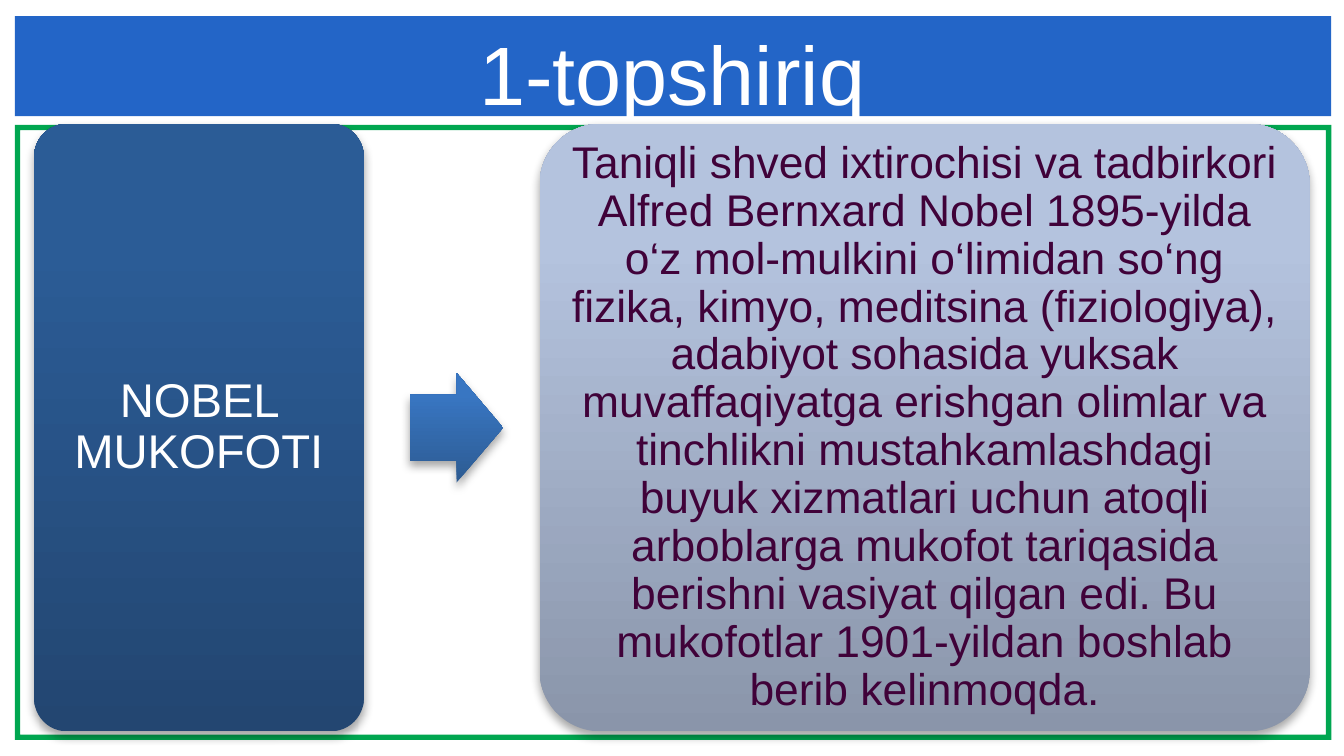
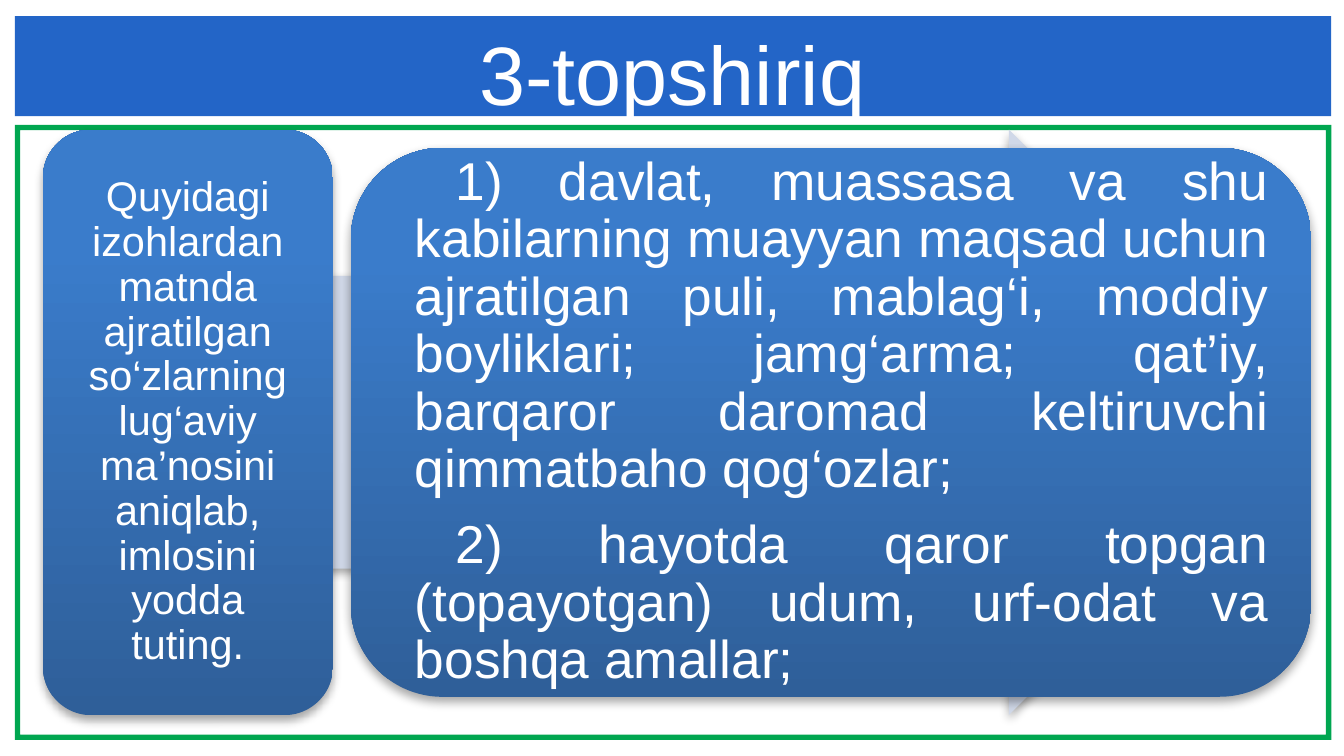
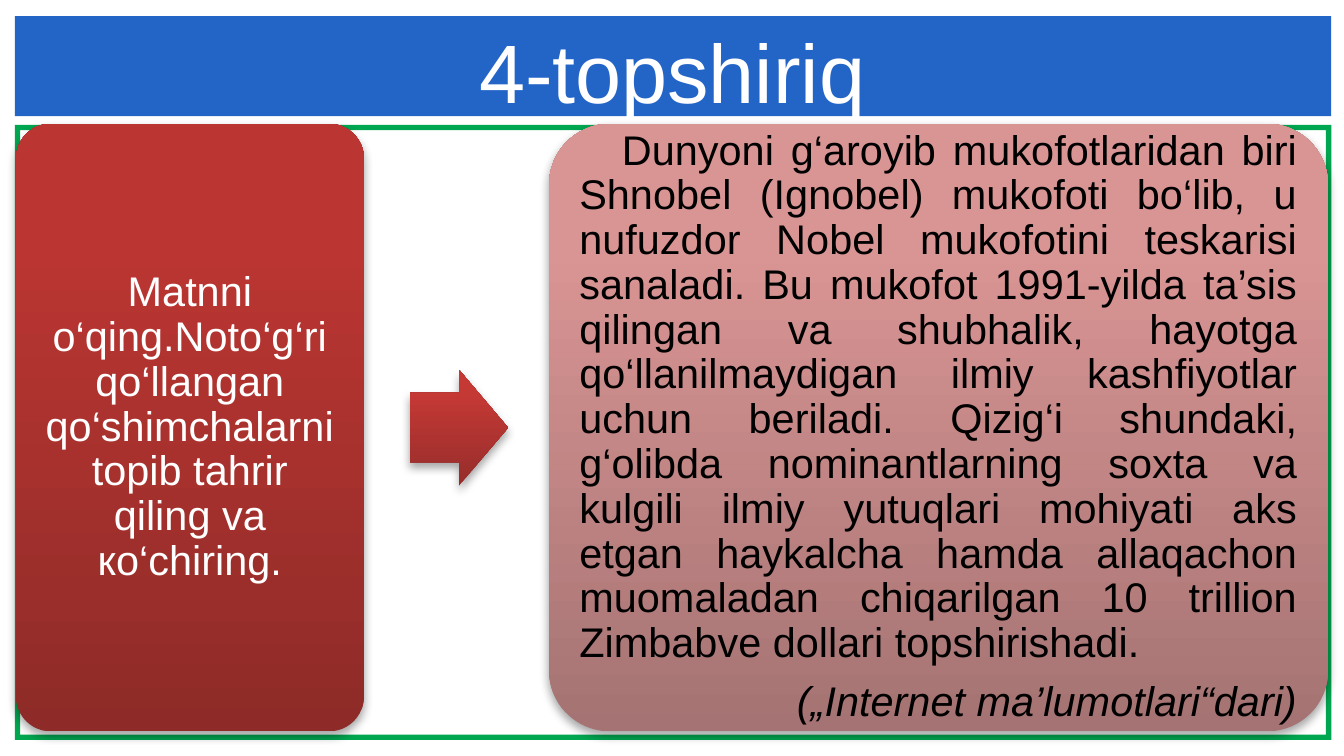
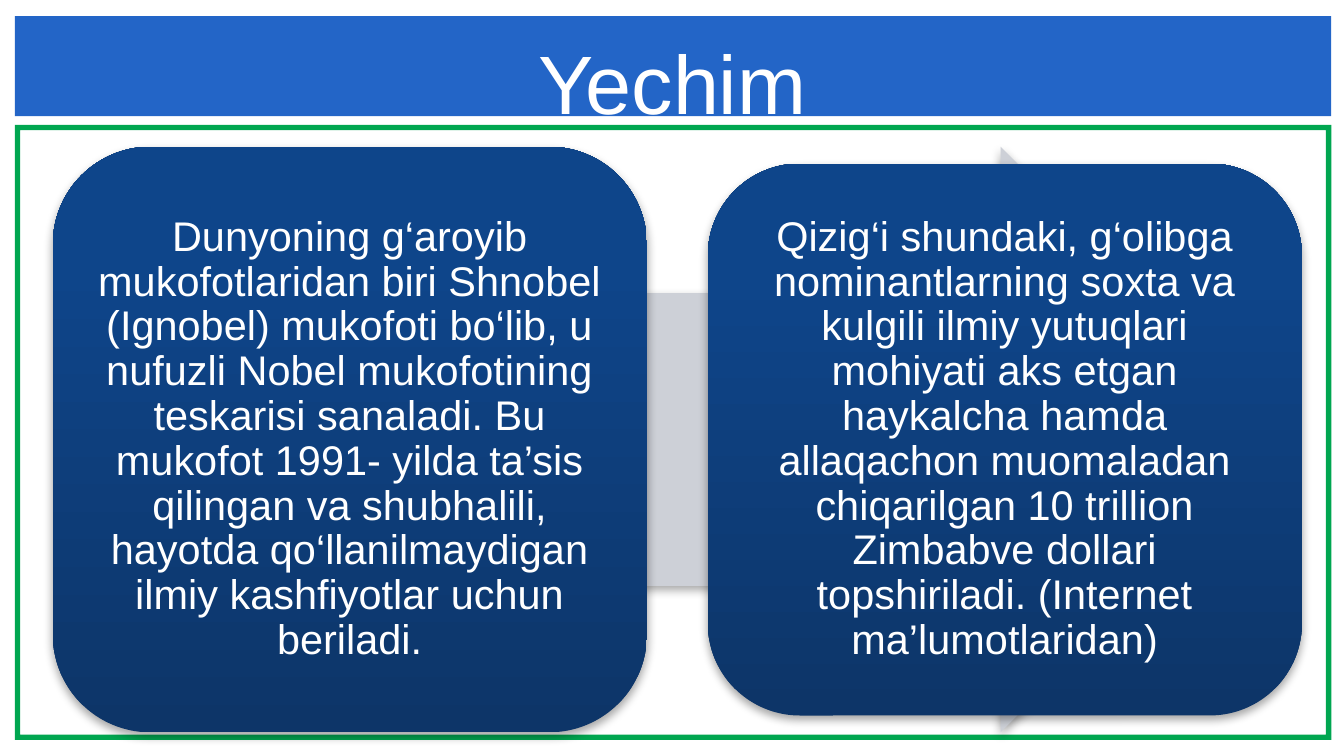
from typing import NamedTuple

from lxml.etree import SubElement
from pptx import Presentation
from pptx.dml.color import RGBColor
from pptx.enum.shapes import MSO_SHAPE as Preset
from pptx.enum.text import MSO_ANCHOR as Anchor, MSO_AUTO_SIZE as AutoSize, PP_ALIGN as Align
from pptx.oxml.ns import qn
from pptx.util import Pt

FONT = "Arial"
WHITE, BLACK, PLUM = "FFFFFF", "000000", "400239"
BAND, FRAME = "2365C7", "00A650"

# Gradients run from the bottom colour up to the top colour
NAVY = ("234671", "2B5C96")
STEEL = ("2D5B92", "3876C2")
MIST = ("8A95AA", "B4C3DE")
BLUE = ("2F5F99", "3A7CCB")
BRICK = ("8E2B28", "BB3632")
RED = ("952D2B", "C53935")
ROSE = ("A57373", "D99594")
DEEP = ("0D3568", "0E458A")


class Box(NamedTuple):
    left: float
    top: float
    width: float
    height: float


class Card(NamedTuple):
    dx: float
    width: float
    height: float
    colors: tuple
    size: float
    lines: list
    ink: str = WHITE
    align: Align = Align.CENTER
    margin: float = 0
    indent: float = 0


def centred_box(area, dx, width, height):
    """A box at dx from the left of the area, centred vertically in it."""
    return Box(area.left + dx, area.top + (area.height - height) / 2, width, height)


def color(hex_code):
    return RGBColor.from_string(hex_code)


def add_preset(shapes, preset, box, fill):
    """Borderless shape with a plain or a two-colour upward fill."""
    shape = shapes.add_shape(preset, *map(Pt, box))
    shape.shadow.inherit = False
    shape.line.fill.background()
    if isinstance(fill, str):
        shape.fill.solid()
        shape.fill.fore_color.rgb = color(fill)
    else:
        shape.fill.gradient()
        shape.fill.gradient_angle = 90
        for stop, position, shade in zip(shape.fill.gradient_stops, (0, 0.8), fill):
            stop.position = position
            stop.color.rgb = color(shade)
    return shape


def add_shadow(shape):
    effects = shape.element.spPr.find(qn("a:effectLst"))
    shadow = SubElement(effects, qn("a:outerShdw"), blurRad=str(Pt(3.1)),
                        dist=str(Pt(1.8)), dir="5400000", rotWithShape="0")
    black = SubElement(shadow, qn("a:srgbClr"), val=BLACK)
    SubElement(black, qn("a:alpha"), val="35000")


def style_layout(prs, layout):
    """Title band and green frame, shown on every slide."""
    first = prs.slides.add_slide(layout)
    band = add_preset(first.shapes, Preset.RECTANGLE, Box(5, 5.5, 445, 33.8), BAND)
    frame_box = Box(5, 42.2, 445, 208)
    frame = add_preset(first.shapes, Preset.FRAME, frame_box, FRAME)
    frame.adjustments[0] = 1.8 / frame_box.height
    for index, shape in enumerate((frame, band)):
        layout.shapes.element.insert(2 + index, shape.element)
    return first


def set_title(slide, text, top):
    title = slide.shapes.title
    title.left, title.top, title.width, title.height = map(Pt, (23.8, top, 406.8, 34))
    frame = title.text_frame
    frame.text = text
    frame.auto_size = AutoSize.NONE
    frame.vertical_anchor = Anchor.TOP
    frame.margin_left = frame.margin_right = frame.margin_bottom = 0
    frame.margin_top = Pt(2.6)
    heading = frame.paragraphs[0]
    heading.alignment = Align.CENTER
    heading.font.name, heading.font.size = FONT, Pt(28)
    heading.font.color.rgb = color(WHITE)


def add_card(slide, area, card, rounding):
    box = centred_box(area, card.dx, card.width, card.height)
    shape = add_preset(slide.shapes, Preset.ROUNDED_RECTANGLE, box, card.colors)
    shape.adjustments[0] = rounding
    add_shadow(shape)
    frame = shape.text_frame
    frame.word_wrap = True
    frame.vertical_anchor = Anchor.MIDDLE
    inset = Pt(0.3 * card.size)
    frame.margin_left = frame.margin_right = frame.margin_top = frame.margin_bottom = inset
    frame.text = "\n".join(card.lines)
    for line in frame.paragraphs:
        line.alignment = card.align
        line.line_spacing = 0.9
        line.space_after = Pt(0.35 * card.size)
        line.font.name, line.font.size = FONT, Pt(card.size)
        line.font.color.rgb = color(card.ink)
        indents = line._p.get_or_add_pPr()
        indents.set("marL", str(Pt(card.margin)))
        indents.set("indent", str(Pt(card.indent)))
    return shape


def fill_step(slide, area, task, answer, arrow_colors):
    """Task card, small arrow, answer card."""
    add_card(slide, area, task, 0.1)
    arrow_width = 0.282 * task.width
    arrow_box = centred_box(area, task.dx + task.width + 15.6, arrow_width, 1.18 * arrow_width)
    arrow = add_preset(slide.shapes, Preset.RIGHT_ARROW, arrow_box, arrow_colors)
    arrow.adjustments[0] = 0.6
    add_shadow(arrow)
    return add_card(slide, area, answer, 0.1)


def fill_process(slide, area, cards, arrow_color):
    """Cards in a row on one wide arrow."""
    add_shadow(add_preset(slide.shapes, Preset.RIGHT_ARROW, area, arrow_color))
    for card in cards:
        add_card(slide, area, card, 0.16667)


def main():
    prs = Presentation()
    prs.slide_width, prs.slide_height = Pt(454.3), Pt(255.6)
    layout = prs.slide_layouts[5]
    step_area = Box(5.4, 41.9, 443.5, 205.4)

    # Nobel prize
    nobel = style_layout(prs, layout)
    set_title(nobel, "1-topshiriq", 5)
    fill_step(
        nobel, step_area,
        Card(6.1, 111.5, 205.4, NAVY, 16, ["NOBEL MUKOFOTI"]),
        Card(177, 260.3, 205.4, MIST, 15, [
            "Taniqli shved ixtirochisi va tadbirkori Alfred Bernxard Nobel 1895-yilda "
            "o‘z mol-mulkini o‘limidan so‘ng fizika, kimyo, meditsina (fiziologiya), "
            "adabiyot sohasida yuksak muvaffaqiyatga erishgan olimlar va tinchlikni "
            "mustahkamlashdagi buyuk xizmatlari uchun atoqli arboblarga mukofot "
            "tariqasida berishni vasiyat qilgan edi. Bu mukofotlar 1901-yildan "
            "boshlab berib kelinmoqda."], PLUM),
        STEEL)

    # Word meanings
    meanings = prs.slides.add_slide(layout)
    set_title(meanings, "3-topshiriq", 5)
    fill_process(meanings, Box(23.8, 43.8, 416.2, 198), [
        Card(-9.3, 98, 198, BLUE, 14, [
            "Quyidagi izohlardan matnda ajratilgan so‘zlarning lug‘aviy ma’nosini "
            "aniqlab, imlosini yodda tuting."]),
        Card(94.8, 324.6, 185.6, BLUE, 18, [
            "1) davlat, muassasa va shu kabilarning muayyan maqsad uchun ajratilgan "
            "puli, mablag‘i, moddiy boyliklari; jamg‘arma; qat’iy, barqaror daromad "
            "keltiruvchi qimmatbaho qog‘ozlar;",
            "2) hayotda qaror topgan (topayotgan) udum, urf-odat va boshqa amallar;"],
            align=Align.JUSTIFY, margin=7.2, indent=13.7),
    ], "D0D8E8")

    # Text to correct
    editing = prs.slides.add_slide(layout)
    set_title(editing, "4-topshiriq", 4.5)
    answer = fill_step(
        editing, step_area,
        Card(0, 117.6, 205.4, BRICK, 14, [
            "Matnni o‘qing.Noto‘g‘ri qo‘llangan qo‘shimchalarni topib tahrir qiling "
            "va ко‘chiring."]),
        Card(180.2, 263.3, 205.4, ROSE, 14, [
            "Dunyoni g‘aroyib mukofotlaridan biri Shnobel (Ignobel) mukofoti bo‘lib, "
            "u nufuzdor Nobel mukofotini teskarisi sanaladi. Bu mukofot 1991-yilda "
            "ta’sis qilingan va shubhalik, hayotga qo‘llanilmaydigan ilmiy "
            "kashfiyotlar uchun beriladi. Qizig‘i shundaki, g‘olibda nominantlarning "
            "soxta va kulgili ilmiy yutuqlari mohiyati aks etgan haykalcha hamda "
            "allaqachon muomaladan chiqarilgan 10 trillion Zimbabve dollari "
            "topshirishadi.",
            "(„Internet ma’lumotlari“dari)"],
            BLACK, Align.JUSTIFY, indent=14.4),
        RED)
    credit = answer.text_frame.paragraphs[-1]
    credit.alignment = Align.RIGHT
    credit.font.italic = True

    # Corrected text
    solution = prs.slides.add_slide(layout)
    set_title(solution, "Yechim", 8)
    fill_process(solution, Box(21, 49.6, 416.2, 198), [
        Card(-3.1, 200.8, 198, DEEP, 14, [
            "Dunyoning g‘aroyib mukofotlaridan biri Shnobel (Ignobel) mukofoti "
            "bo‘lib, u nufuzli Nobel mukofotining teskarisi sanaladi. Bu mukofot "
            "1991- yilda ta’sis qilingan va shubhalili, hayotda qo‘llanilmaydigan "
            "ilmiy kashfiyotlar uchun beriladi."]),
        Card(218.3, 200.8, 186.6, DEEP, 14, [
            "Qizig‘i shundaki, g‘olibga nominantlarning soxta va kulgili ilmiy "
            "yutuqlari mohiyati aks etgan haykalcha hamda allaqachon muomaladan "
            "chiqarilgan 10 trillion Zimbabve dollari topshiriladi. (Internet "
            "ma’lumotlaridan)"]),
    ], "CDD0D7")

    prs.save("out.pptx")


if __name__ == "__main__":
    main()
